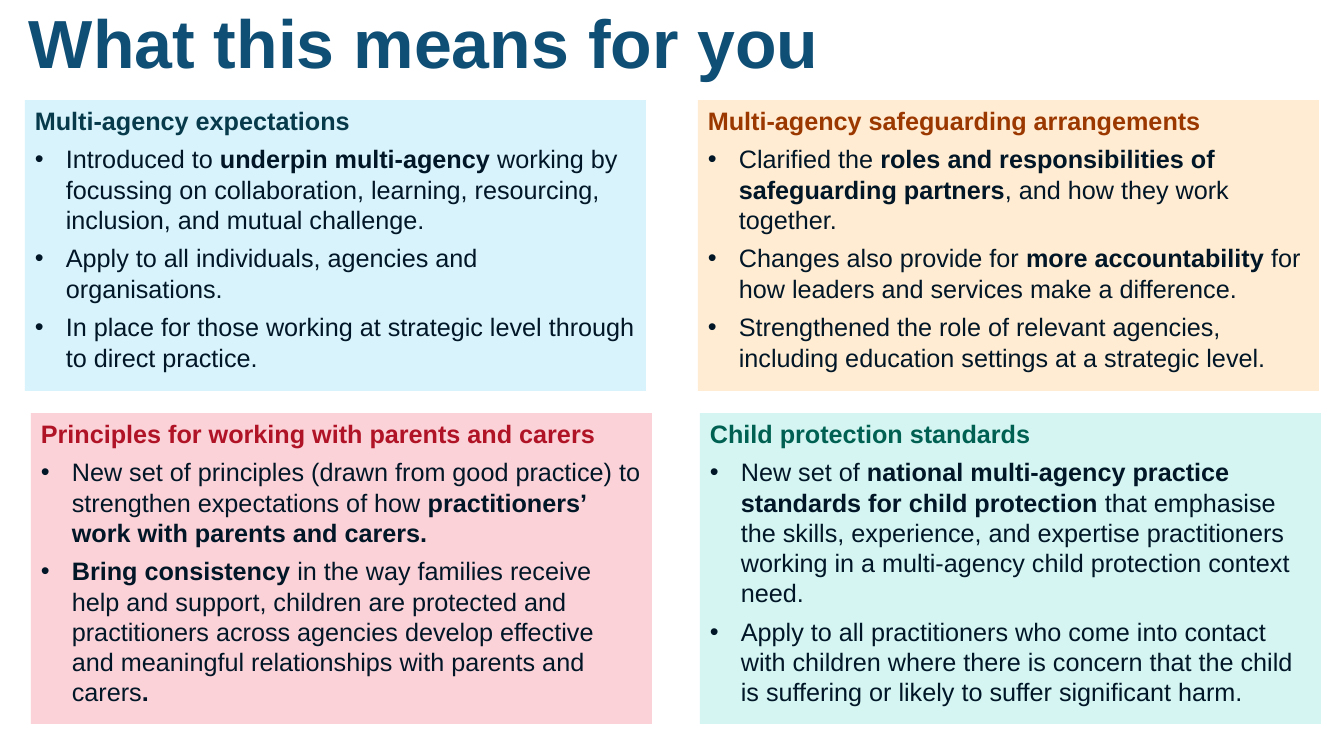
from lxml import etree
from pptx import Presentation
from pptx.dml.color import RGBColor
from pptx.enum.shapes import MSO_SHAPE
from pptx.enum.text import MSO_ANCHOR, PP_ALIGN
from pptx.oxml.ns import qn
from pptx.util import Emu, Pt

FONT = "Arial"
TITLE_BLUE = RGBColor(0x10, 0x4F, 0x75)
INK = RGBColor(0x01, 0x16, 0x27)
NAVY, PALE_BLUE = RGBColor(0x07, 0x3B, 0x4C), RGBColor(0xD8, 0xF3, 0xFB)
RUST, PALE_ORANGE = RGBColor(0x9B, 0x38, 0x00), RGBColor(0xFF, 0xEC, 0xD2)
CRIMSON, PALE_PINK = RGBColor(0xB0, 0x13, 0x26), RGBColor(0xFA, 0xD2, 0xD7)
GREEN, PALE_TEAL = RGBColor(0x00, 0x61, 0x52), RGBColor(0xD4, 0xF5, 0xF2)

PANEL_WIDTH = 621
BULLET_INDENT = 31

# Bold phrases sit between ** marks.
PANELS = [
    (25, 100, 291, PALE_BLUE, NAVY, "Multi-agency expectations", [
        "Introduced to **underpin multi-agency **working by focussing on collaboration, "
        "learning, resourcing, inclusion, and mutual challenge.",
        "Apply to all individuals, agencies and organisations.",
        "In place for those working at strategic level through to direct practice.",
    ]),
    (698, 100, 291, PALE_ORANGE, RUST, "Multi-agency safeguarding arrangements", [
        "Clarified the **roles and responsibilities of safeguarding partners**, "
        "and how they work together.",
        "Changes also provide for **more accountability **for how leaders "
        "and services make a difference.",
        "Strengthened the role of relevant agencies, including education settings "
        "at a strategic level.",
    ]),
    (31, 413, 311, PALE_PINK, CRIMSON, "Principles for working with parents and carers", [
        "New set of principles (drawn from good practice) to strengthen expectations "
        "of how** practitioners’ work with parents and carers.**",
        "**Bring consistency **in the way families receive help and support, children are "
        "protected and practitioners across agencies develop effective and meaningful "
        "relationships with parents and carers**.**",
    ]),
    (700, 413, 311, PALE_TEAL, GREEN, "Child protection standards", [
        "New set of **national multi-agency practice standards for child protection **that "
        "emphasise the skills, experience, and expertise practitioners working in a "
        "multi-agency child protection context need.",
        "Apply to all practitioners who come into contact with children where there is "
        "concern that the child is suffering or likely to suffer significant harm.",
    ]),
]


def px(length):
    return Emu(round(length * 914400 / 100.8))


def write(paragraph, text, *, size=18, color=INK, bold=False, after=6, line_spacing=None):
    """Fill a paragraph, switching bold at each ** mark."""
    paragraph.alignment = PP_ALIGN.LEFT
    paragraph.space_after = Pt(after)
    if line_spacing:
        paragraph.line_spacing = line_spacing
    for index, part in enumerate(text.split("**")):
        if part:
            run = paragraph.add_run()
            run.text = part
            run.font.name = FONT
            run.font.size = Pt(size)
            run.font.color.rgb = color
            run.font.bold = bold or index % 2 == 1


def add_bullet(paragraph):
    properties = paragraph._p.get_or_add_pPr()
    properties.set("marL", str(px(BULLET_INDENT)))
    properties.set("indent", str(-px(BULLET_INDENT)))
    etree.SubElement(properties, qn("a:buFont"), typeface=FONT)
    etree.SubElement(properties, qn("a:buChar"), char="•")


def add_title(slide, text):
    frame = slide.shapes.add_textbox(px(19), px(0), px(1159), px(92)).text_frame
    frame.word_wrap = True
    frame.vertical_anchor = MSO_ANCHOR.MIDDLE
    write(frame.paragraphs[0], text, size=48.6, color=TITLE_BLUE, bold=True,
          after=12, line_spacing=0.9)


def add_panel(slide, left, top, height, fill, heading_color, heading, points):
    panel = slide.shapes.add_shape(
        MSO_SHAPE.RECTANGLE, px(left), px(top), px(PANEL_WIDTH), px(height))
    panel.shadow.inherit = False
    panel.fill.solid()
    panel.fill.fore_color.rgb = fill
    panel.line.fill.background()
    frame = panel.text_frame
    frame.word_wrap = True
    frame.vertical_anchor = MSO_ANCHOR.TOP
    write(frame.paragraphs[0], heading, color=heading_color, bold=True)
    for point in points:
        paragraph = frame.add_paragraph()
        write(paragraph, point)
        add_bullet(paragraph)


def main():
    deck = Presentation()
    deck.slide_width, deck.slide_height = px(1344), px(756)
    slide = deck.slides.add_slide(deck.slide_layouts[6])
    add_title(slide, "What this means for you")
    for panel in PANELS:
        add_panel(slide, *panel)
    deck.save("out.pptx")


if __name__ == "__main__":
    main()
